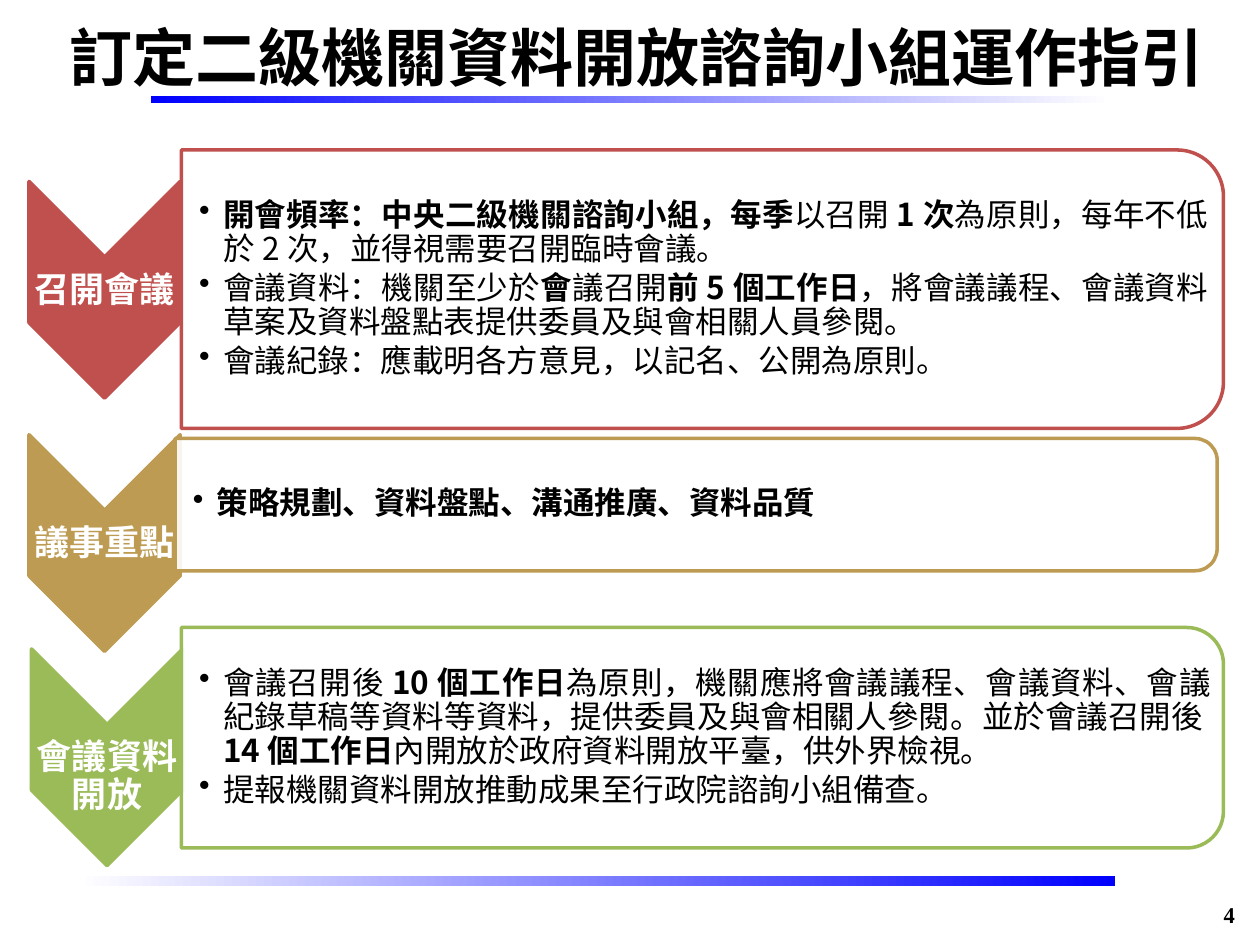
import pptx
import pptx.util
import pptx.dml.color
import pptx.enum.shapes
import pptx.enum.text
import pptx.oxml.ns
from lxml import etree

Inches = pptx.util.Inches
Pt = pptx.util.Pt
RGBColor = pptx.dml.color.RGBColor
MSO_SHAPE = pptx.enum.shapes.MSO_SHAPE
PP_ALIGN = pptx.enum.text.PP_ALIGN
MSO_ANCHOR = pptx.enum.text.MSO_ANCHOR
qn = pptx.oxml.ns.qn

BLACK = RGBColor(0x00, 0x00, 0x00)
WHITE = RGBColor(0xFF, 0xFF, 0xFF)
BLUE = RGBColor(0x00, 0x00, 0xFF)
RED = RGBColor(0xC0, 0x50, 0x4D)
GOLD = RGBColor(0xBD, 0x9B, 0x53)
GREEN = RGBColor(0x9B, 0xBB, 0x59)
SANS = "Noto Sans CJK SC"
SERIF = "Times New Roman"

TITLE = "訂定二級機關資料開放諮詢小組運作指引"
PAGE_NUMBER = "4"
BARS = [
    ((0.62, 6.95, 8.23, 0.08), (WHITE, BLUE)),
    ((1.2, 0.76, 7.62, 0.06), (BLUE, WHITE)),
]
STEPS = [
    {
        "label": "召開會議", "color": RED,
        "chevron": (0.23, 1.44), "label_top": 2.05,
        "panel": (1.44, 1.19), "panel_height": 2.21,
        "items": [
            "**開會頻率：中央二級機關諮詢小組，每季**以召開**1次**為原則，每年不低於2次，並得視需要召開臨時會議。",
            "會議資料：機關至少於**會**議召開**前5個工作日**，將會議議程、會議資料草案及資料盤點表提供委員及與會相關人員參閱。",
            "會議紀錄：應載明各方意見，以記名、公開為原則。",
        ],
    },
    {
        "label": "議事重點", "color": GOLD,
        "chevron": (0.23, 3.45), "label_top": 4.06,
        "panel": (1.39, 3.48), "panel_height": 1.05,
        "items": ["**策略規劃、資料盤點、溝通推廣、資料品質**"],
    },
    {
        "label": "會議資料 開放", "color": GREEN,
        "chevron": (0.25, 5.15), "label_top": 5.91,
        "panel": (1.44, 4.98), "panel_height": 1.75,
        "items": [
            "會議召開後**10個工作日**為原則，機關應將會議議程、會議資料、會議紀錄草稿等資料等資料，提供委員及與會相關人參閱。並於會議召開後**14個工作日**內開放於政府資料開放平臺，供外界檢視。",
            "提報機關資料開放推動成果至行政院諮詢小組備查。",
        ],
    },
]
CHEVRON_WIDTH, CHEVRON_HEIGHT = 1.2, 1.72
LABEL_HEIGHT = 0.52
PANEL_WIDTH = 8.27
CORNER_INSET = 0.05
BULLET_INDENT = 0.19


def set_values(target, values):
    for name, value in values.items():
        setattr(target, name, value)


def add_run(paragraph, text, size, color, bold, typeface=SANS):
    run = paragraph.add_run()
    run.text = text
    run.font.color.rgb = color
    set_values(run.font, {"size": Pt(size), "bold": bold, "name": typeface})
    etree.SubElement(run.font._element, qn("a:ea"), typeface=typeface)


def add_text_frame(slide, left, top, width, height, margin_left=0.01):
    frame = slide.shapes.add_textbox(*map(Inches, (left, top, width, height))).text_frame
    set_values(frame, {
        "word_wrap": True,
        "vertical_anchor": MSO_ANCHOR.MIDDLE,
        "margin_left": Inches(margin_left),
        "margin_right": Inches(0.01),
        "margin_top": Inches(0.01),
        "margin_bottom": Inches(0.01),
    })
    return frame


def add_turned_shape(slide, kind, left, top, width, height, fill, line):
    shape = slide.shapes.add_shape(
        kind,
        Inches(left + (width - height) / 2), Inches(top + (height - width) / 2),
        Inches(height), Inches(width),
    )
    shape.rotation = 90
    shape.shadow.inherit = False
    shape.fill.solid()
    shape.fill.fore_color.rgb = fill
    shape.line.color.rgb = line
    shape.line.width = Pt(2)
    return shape


def add_bar(slide, box, colors):
    bar = slide.shapes.add_shape(MSO_SHAPE.RECTANGLE, *map(Inches, box))
    bar.shadow.inherit = False
    bar.line.fill.background()
    bar.fill.gradient()
    bar.fill.gradient_angle = 0
    for stop, color, position in zip(bar.fill.gradient_stops, colors, (0, 1)):
        stop.color.rgb = color
        stop.position = position


def add_bullet_item(paragraph, text):
    properties = paragraph._p.get_or_add_pPr()
    properties.set("marL", str(Inches(BULLET_INDENT)))
    properties.set("indent", str(-Inches(BULLET_INDENT)))
    etree.SubElement(properties, qn("a:buChar"), char="•")
    set_values(paragraph, {
        "alignment": PP_ALIGN.JUSTIFY, "line_spacing": 0.9, "space_after": Pt(3),
    })
    for index, part in enumerate(text.split("**")):
        if part:
            add_run(paragraph, part, 18, BLACK, index % 2 == 1)


def add_step(slide, step):
    left, top = step["chevron"]
    add_turned_shape(slide, MSO_SHAPE.CHEVRON, left, top,
                     CHEVRON_WIDTH, CHEVRON_HEIGHT, step["color"], step["color"])
    frame = add_text_frame(slide, left, step["label_top"], CHEVRON_WIDTH, LABEL_HEIGHT)
    paragraph = frame.paragraphs[0]
    set_values(paragraph, {"alignment": PP_ALIGN.CENTER, "line_spacing": 0.9})
    add_run(paragraph, step["label"], 20, WHITE, True)

    left, top = step["panel"]
    height = step["panel_height"]
    panel = add_turned_shape(slide, MSO_SHAPE.ROUND_2_SAME_RECTANGLE, left, top,
                             PANEL_WIDTH, height, WHITE, step["color"])
    fill_color = panel._element.spPr.find(qn("a:solidFill")).find(qn("a:srgbClr"))
    etree.SubElement(fill_color, qn("a:alpha"), val="90000")

    inset = height * CORNER_INSET
    frame = add_text_frame(slide, left, top + inset, PANEL_WIDTH - inset,
                           height - 2 * inset, margin_left=0.14)
    for index, item in enumerate(step["items"]):
        paragraph = frame.add_paragraph() if index else frame.paragraphs[0]
        add_bullet_item(paragraph, item)


def main():
    presentation = pptx.Presentation()
    set_values(presentation, {"slide_width": Inches(10), "slide_height": Inches(7.5)})
    slide = presentation.slides.add_slide(presentation.slide_layouts[5])

    for box, colors in BARS:
        add_bar(slide, box, colors)

    title = slide.shapes.title
    set_values(title, {
        "left": Inches(0.3), "top": Inches(0.09),
        "width": Inches(9.51), "height": Inches(0.71),
    })
    title.text_frame.vertical_anchor = MSO_ANCHOR.MIDDLE
    paragraph = title.text_frame.paragraphs[0]
    paragraph.alignment = PP_ALIGN.CENTER
    add_run(paragraph, TITLE, 36, BLACK, True)

    for step in STEPS:
        add_step(slide, step)

    frame = add_text_frame(slide, 9.13, 7.14, 0.68, 0.24)
    paragraph = frame.paragraphs[0]
    paragraph.alignment = PP_ALIGN.RIGHT
    add_run(paragraph, PAGE_NUMBER, 12.9, BLACK, True, SERIF)

    presentation.save("out.pptx")


if __name__ == "__main__":
    main()
